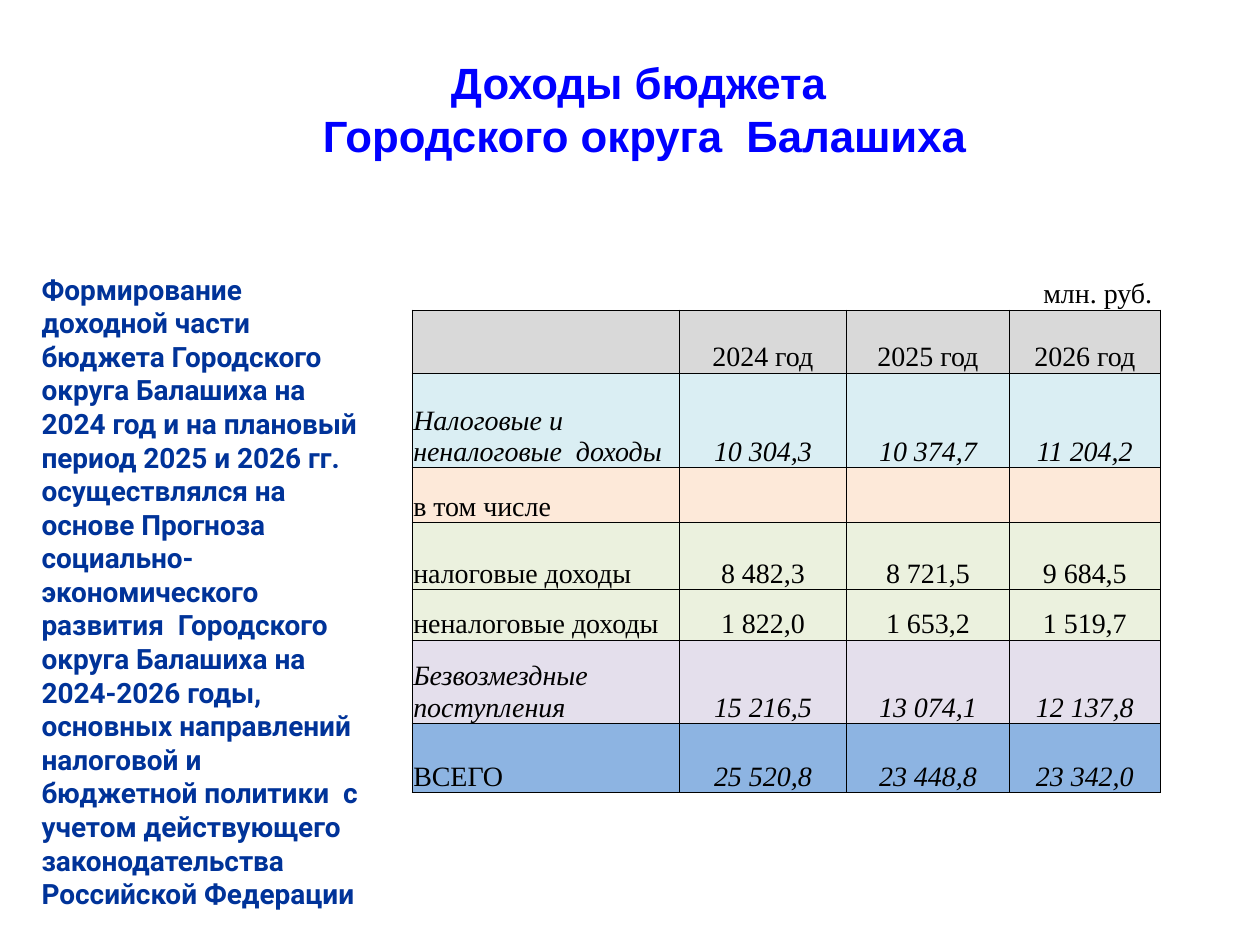
"""Build the slide with the budget revenues of the Balashikha urban district."""
from copy import deepcopy
from dataclasses import dataclass

from lxml.etree import SubElement
from pptx import Presentation
from pptx.dml.color import RGBColor
from pptx.enum.text import MSO_ANCHOR, MSO_AUTO_SIZE, PP_ALIGN
from pptx.oxml.ns import qn
from pptx.util import Inches, Pt

BLACK = RGBColor(0x00, 0x00, 0x00)
TITLE_BLUE = RGBColor(0x00, 0x00, 0xFF)
BODY_BLUE = RGBColor(0x00, 0x33, 0x99)
GREY = RGBColor(0xD9, 0xD9, 0xD9)
AQUA = RGBColor(0xDA, 0xEE, 0xF3)
PEACH = RGBColor(0xFD, 0xE9, 0xD9)
GREEN = RGBColor(0xEB, 0xF1, 0xDE)
LILAC = RGBColor(0xE4, 0xDF, 0xEC)
TOTAL_BLUE = RGBColor(0x8D, 0xB4, 0xE2)

TITLE = "Доходы бюджета \vГородского округа  Балашиха"
BODY = (
    "Формирование доходной части бюджета Городского округа Балашиха на 2024 год "
    "и на плановый период 2025 и 2026 гг. осуществлялся на основе Прогноза "
    "социально-экономического развития  Городского округа Балашиха на 2024-2026 годы, "
    "основных направлений налоговой и бюджетной политики  с учетом действующего "
    "законодательства Российской Федерации"
)
UNIT = "млн. руб. "
UNIT_ROW_HEIGHT = 0.28
COLUMN_WIDTHS = (2.12, 1.33, 1.29, 1.2)


@dataclass
class RevenueRow:
    label: str
    values: tuple
    height: float
    fill: RGBColor
    italic_label: bool = False
    italic_values: bool = False


ROWS = (
    RevenueRow("", ("2024 год", "2025 год", "2026 год"), 0.5, GREY),
    RevenueRow("Налоговые и неналоговые  доходы", ("10 304,3", "10 374,7", "11 204,2"),
               0.75, AQUA, True, True),
    RevenueRow("в том числе", ("", "", ""), 0.44, PEACH),
    RevenueRow("налоговые доходы", ("8 482,3", "8 721,5", "9 684,5"), 0.53, GREEN),
    RevenueRow("неналоговые доходы", ("1 822,0", "1 653,2", "1 519,7"), 0.4, GREEN),
    RevenueRow("Безвозмездные  поступления", ("15 216,5", "13 074,1", "12 137,8"),
               0.66, LILAC, True, True),
    RevenueRow("ВСЕГО", ("25 520,8", "23 448,8", "23 342,0"), 0.55, TOTAL_BLUE,
               italic_values=True),
)


def write_text(text_frame, text: str, *, size: float = 16, font: str = "Times New Roman",
               color: RGBColor = BLACK, bold: bool = False, italic: bool = False,
               align: PP_ALIGN = PP_ALIGN.LEFT) -> None:
    paragraph = text_frame.paragraphs[0]
    paragraph.text = text
    paragraph.alignment = align
    for run in paragraph.runs:
        run.font.name = font
        run.font.size = Pt(size)
        run.font.bold = bold
        run.font.italic = italic
        run.font.color.rgb = color
    for line_break in paragraph._p.findall(qn("a:br")):
        line_break.append(deepcopy(paragraph.runs[0]._r.rPr))


def place_placeholder(shape, left: float, top: float, width: float, height: float) -> None:
    shape.left, shape.top = Inches(left), Inches(top)
    shape.width, shape.height = Inches(width), Inches(height)
    shape.text_frame.word_wrap = True
    shape.text_frame.auto_size = MSO_AUTO_SIZE.SHAPE_TO_FIT_TEXT


def remove_bullet(paragraph) -> None:
    properties = paragraph._p.get_or_add_pPr()
    properties.set("marL", "0")
    properties.set("indent", "0")
    SubElement(properties, qn("a:buNone"))
    paragraph.space_before = Pt(0)


def add_borders(cell, sides: str) -> None:
    properties = cell._tc.get_or_add_tcPr()
    for side in sides:
        line = SubElement(properties, qn(f"a:ln{side}"), w=str(Pt(0.5)))
        fill = SubElement(line, qn("a:solidFill"))
        SubElement(fill, qn("a:srgbClr"), val=str(BLACK))


def set_margins(cell) -> None:
    cell.margin_left = cell.margin_right = cell.margin_top = Inches(0.01)
    cell.margin_bottom = 0
    cell.vertical_anchor = MSO_ANCHOR.BOTTOM


def draw_unit_row(table) -> None:
    for cell in table.rows[0].cells:
        set_margins(cell)
        add_borders(cell, "B")
        cell.fill.background()
    unit_cell = table.cell(0, 0)
    unit_cell.merge(table.cell(0, len(COLUMN_WIDTHS) - 1))
    write_text(unit_cell.text_frame, UNIT, align=PP_ALIGN.RIGHT)


def draw_revenue_row(table, index: int, row: RevenueRow) -> None:
    table.rows[index].height = Inches(row.height)
    for column, text in enumerate((row.label, *row.values)):
        cell = table.cell(index, column)
        set_margins(cell)
        add_borders(cell, "LRTB")
        cell.fill.solid()
        cell.fill.fore_color.rgb = row.fill
        write_text(cell.text_frame, text,
                   italic=row.italic_values if column else row.italic_label,
                   align=PP_ALIGN.CENTER if column else PP_ALIGN.LEFT)


def draw_table(slide) -> None:
    height = UNIT_ROW_HEIGHT + sum(row.height for row in ROWS)
    table = slide.shapes.add_table(
        len(ROWS) + 1, len(COLUMN_WIDTHS), Inches(3.27), Inches(2.18),
        Inches(sum(COLUMN_WIDTHS)), Inches(height)).table
    table.first_row = table.horz_banding = False
    for column, width in zip(table.columns, COLUMN_WIDTHS):
        column.width = Inches(width)
    table.rows[0].height = Inches(UNIT_ROW_HEIGHT)
    draw_unit_row(table)
    for index, row in enumerate(ROWS, start=1):
        draw_revenue_row(table, index, row)


def main() -> None:
    presentation = Presentation()
    presentation.slide_width, presentation.slide_height = Inches(10), Inches(7.5)
    slide = presentation.slides.add_slide(presentation.slide_layouts[1])

    title, body = slide.shapes.title, slide.placeholders[1]
    place_placeholder(title, 0.31, 0.39, 9.61, 0.94)
    write_text(title.text_frame, TITLE, size=25, font="Arial", color=TITLE_BLUE,
               bold=True, align=PP_ALIGN.CENTER)
    place_placeholder(body, 0.23, 2.11, 2.73, 4.41)
    remove_bullet(body.text_frame.paragraphs[0])
    write_text(body.text_frame, BODY, font="Roboto", color=BODY_BLUE, bold=True)

    draw_table(slide)
    presentation.save("out.pptx")


if __name__ == "__main__":
    main()
